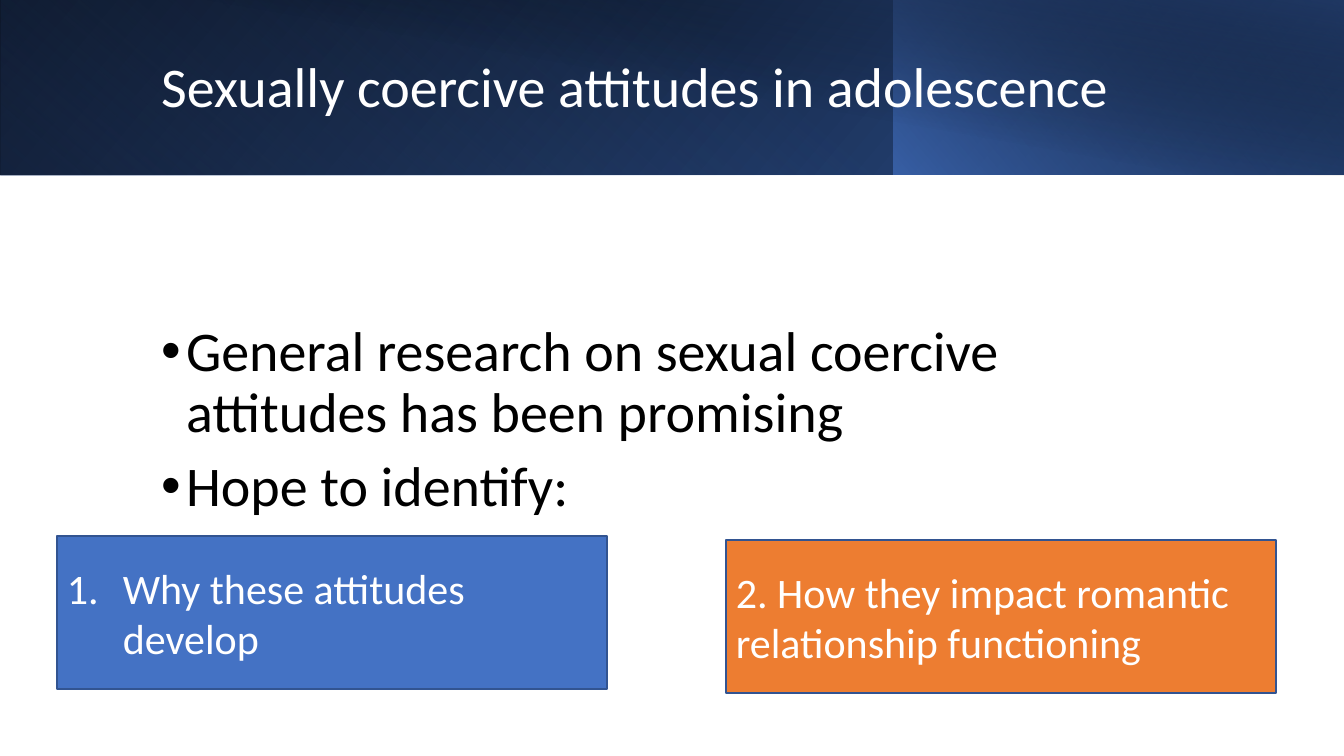
from pptx import Presentation
from pptx.dml.color import RGBColor
from pptx.enum.shapes import MSO_SHAPE
from pptx.enum.text import MSO_ANCHOR, MSO_AUTO_SIZE, PP_ALIGN
from pptx.oxml import parse_xml
from pptx.oxml.ns import nsdecls
from pptx.util import Pt

EMU_PER_PX = 914400 / 100.8


def px(length):
    return round(length * EMU_PER_PX)


def rgb(colour):
    return RGBColor.from_string(colour)


def apply(target, values):
    for name, value in values.items():
        setattr(target, name, value)


class SlideBuilder:
    """Holds the text style and the slide being filled."""

    font = "Calibri"
    white, black, outline = "FFFFFF", "000000", "325491"

    def __init__(self, slide):
        self.slide = slide

    def place(self, shape, box):
        apply(shape, dict(zip(("left", "top", "width", "height"), map(px, box))))

    def rectangle(self, box):
        shape = self.slide.shapes.add_shape(MSO_SHAPE.RECTANGLE, *map(px, box))
        shape.shadow.inherit = False
        return shape

    def gradient_band(self, box, stops, angle, flip=True, rotation=0):
        """Stops are (position %, colour, opacity %); the angle runs clockwise."""
        shape = self.rectangle(box)
        shape.rotation = rotation
        properties = shape._element.spPr
        if flip:
            properties.get_or_add_xfrm().set("flipH", "1")
        stop_xml = "".join(
            f'<a:gs pos="{position * 1000}"><a:srgbClr val="{colour}">'
            f'<a:alpha val="{opacity * 1000}"/></a:srgbClr></a:gs>'
            for position, colour, opacity in stops)
        gradient = parse_xml(
            f'<a:gradFill {nsdecls("a")} rotWithShape="1"><a:gsLst>{stop_xml}</a:gsLst>'
            f'<a:lin ang="{angle * 60000}" scaled="0"/></a:gradFill>')
        properties.find("{*}prstGeom").addnext(gradient)
        shape.line.fill.background()

    def set_text(self, frame, lines, size, colour, indent=0, numbered=False, **spacing):
        apply(frame, {"word_wrap": True, "auto_size": MSO_AUTO_SIZE.NONE,
                      "vertical_anchor": MSO_ANCHOR.MIDDLE})
        frame.text = "\n".join(lines)
        for paragraph in frame.paragraphs:
            apply(paragraph, {"alignment": PP_ALIGN.LEFT, **spacing})
            apply(paragraph.runs[0].font, {"name": self.font, "size": Pt(size)})
            paragraph.runs[0].font.color.rgb = rgb(colour)
            properties = paragraph._p.get_or_add_pPr()
            properties.set("marL", str(px(indent)))
            properties.set("indent", str(-px(indent)))
            if numbered:
                properties.append(parse_xml(
                    f'<a:buAutoNum {nsdecls("a")} type="arabicPeriod"/>'))

    def title(self, text, box):
        shape = self.slide.shapes.title
        self.place(shape, box)
        self.set_text(shape.text_frame, [text], 40, self.white, line_spacing=0.9)
        self.bring_to_front(shape)

    def bullets(self, lines, box, bottom_margin):
        shape = self.slide.placeholders[1]
        self.place(shape, box)
        self.set_text(shape.text_frame, lines, 40, self.black, indent=25,
                      line_spacing=0.9, space_before=Pt(10))
        shape.text_frame.margin_bottom = px(bottom_margin)
        self.bring_to_front(shape)

    def bring_to_front(self, shape):
        self.slide.shapes._spTree.append(shape._element)

    def question_box(self, text, left, top, fill, **list_style):
        shape = self.rectangle((left, top, 550, 153))
        shape.fill.solid()
        shape.fill.fore_color.rgb = rgb(fill)
        shape.line.color.rgb = rgb(self.outline)
        shape.line.width = Pt(1)
        self.set_text(shape.text_frame, [text], 30, self.white, **list_style)


def main():
    presentation = Presentation()
    apply(presentation, {"slide_width": px(1344), "slide_height": px(756)})
    builder = SlideBuilder(presentation.slides.add_slide(presentation.slide_layouts[1]))

    builder.gradient_band((0, 0, 1344, 175),
                          [(0, "000000", 100), (100, "2F5597", 100)], 140)
    builder.gradient_band((0, 0, 895, 175),
                          [(20, "4472C4", 0), (100, "203864", 55)], 230, rotation=180)
    builder.gradient_band((894, 0, 450, 175),
                          [(0, "4472C4", 66), (100, "000000", 30)], 220)
    builder.gradient_band((50, 0, 1294, 176),
                          [(50, "000000", 0), (99, "203864", 52)], 280, flip=False)

    builder.title("Sexually coercive attitudes in adolescence", (151, 32, 1091, 114))
    builder.bullets(["General research on sexual coercive attitudes has been promising",
                     "Hope to identify:"], (151, 256, 1071, 406), bottom_margin=81)
    builder.question_box("Why these attitudes develop", 57, 536, "4472C4",
                         indent=56, numbered=True)
    builder.question_box("2. How they impact romantic relationship functioning",
                         726, 540, "ED7D31")
    presentation.save("out.pptx")


if __name__ == "__main__":
    main()
